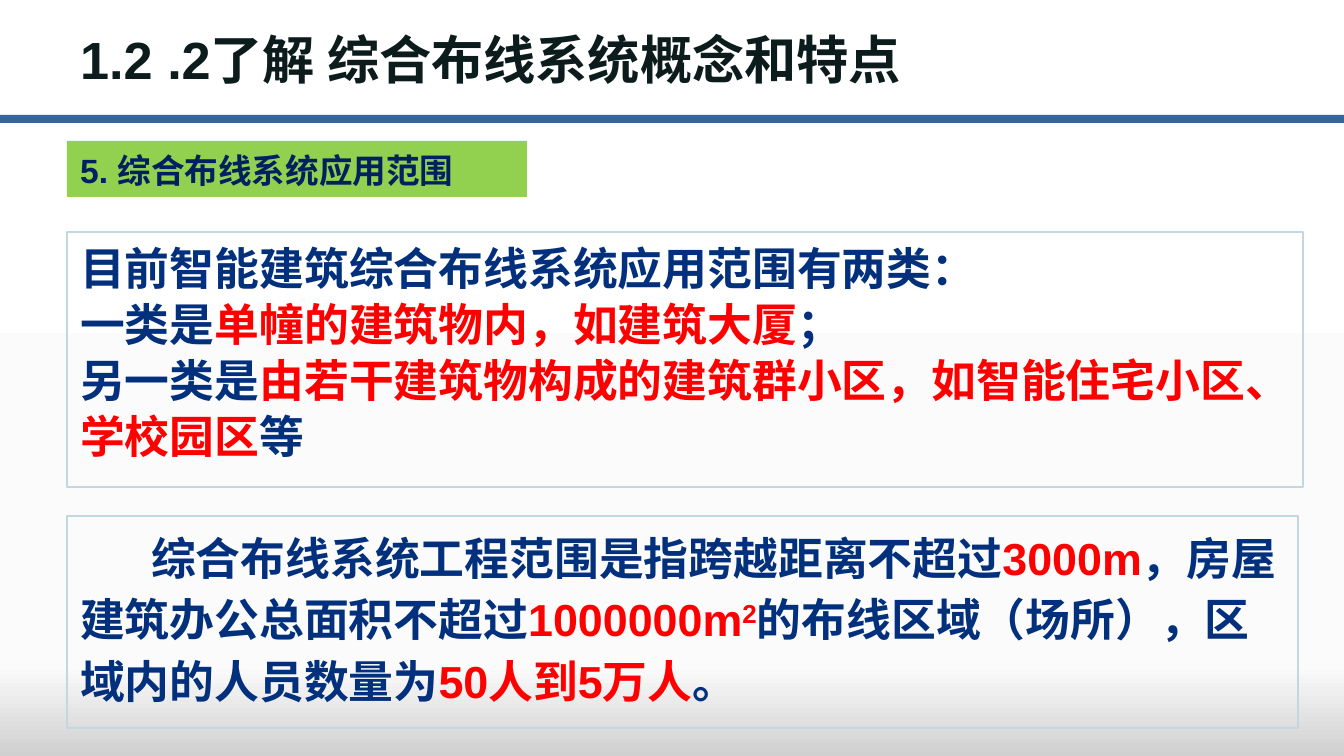
from lxml.etree import SubElement
from pptx import Presentation
from pptx.dml.color import RGBColor as Rgb
from pptx.enum.lang import MSO_LANGUAGE_ID as Lang
from pptx.enum.shapes import MSO_SHAPE as Shape
from pptx.enum.text import MSO_ANCHOR as Anchor, PP_ALIGN as Align
from pptx.oxml.ns import qn
from pptx.util import Pt

PX = 914400 / 134.4
HUES = {
    "title": "0C1C1D", "bar": "336699", "tag": "92D050", "head": "002060",
    "body": "02307C", "key": "FF0000", "edge": "C3D7E1",
}


def px(n):
    return round(n * PX)


def rgb(name):
    return Rgb.from_string(HUES[name])


def write(box, paras, size=24, hue="body", lead=None, dent=0, mid=False):
    """Each paragraph is a list of runs: text, or (text, hue[, baseline])."""
    frame = box.text_frame
    frame.word_wrap = True
    frame.vertical_anchor = Anchor.MIDDLE if mid else Anchor.TOP
    for i, runs in enumerate(paras):
        para = frame.add_paragraph() if i else frame.paragraphs[0]
        para.alignment = Align.LEFT
        para.line_spacing = lead
        if dent:
            para._p.get_or_add_pPr().set("indent", str(px(dent)))
        for part in runs:
            text, tint, *base = (part, hue) if isinstance(part, str) else part
            run = para.add_run()
            run.text = text
            font = run.font
            font.name, font.size, font.bold = "Arial", Pt(size), True
            font.color.rgb = rgb(tint)
            font.language_id = Lang.SIMPLIFIED_CHINESE
            if base:
                font._element.set("baseline", str(base[0] * 1000))


def block(x, y, w, h, fill=None, edge=None):
    box = slide.shapes.add_shape(Shape.RECTANGLE, px(x), px(y), px(w), px(h))
    box.shadow.inherit = False
    if fill:
        box.fill.solid()
        box.fill.fore_color.rgb = rgb(fill)
    else:
        box.fill.background()
    if edge:
        box.line.color.rgb = rgb(edge)
        box.line.width = Pt(0.75)
    else:
        box.line.fill.background()
    return box


deck = Presentation()
deck.slide_width, deck.slide_height = px(1344), px(756)
slide = deck.slides.add_slide(deck.slide_layouts[6])

# Background fading to grey at the foot
back = slide.background.fill
back.gradient()
back.gradient_angle = 270
stops = back._fill._gradFill.find(qn("a:gsLst"))
for old in list(stops):
    stops.remove(old)
for pos, hue in ((0, "FFFFFF"), (88, "FBFBFB"), (100, "D0D0D0")):
    stop = SubElement(stops, qn("a:gs"), pos=str(pos * 1000))
    SubElement(stop, qn("a:srgbClr"), val=hue)

# Title and rule
block(-1, 115, 1346, 8, fill="bar")
title = slide.shapes.add_textbox(px(67), px(12), px(1200), px(94))
write(title, [["1.2 .2了解 综合布线系统概念和特点"]], size=28, hue="title", mid=True)

# Section tag
tag = block(67, 141, 460, 56, fill="tag")
write(tag, [["5. 综合布线系统应用范围"]], size=18, hue="head", lead=1.05, mid=True)

# Two kinds of use
kinds = block(67, 232, 1236, 255, edge="edge")
write(kinds, [
    ["目前智能建筑综合布线系统应用范围有两类："],
    ["一类是", ("单幢的建筑物内，如建筑大厦", "key"), "；"],
    ["另一类是",
     ("由若干建筑物构成的建筑群小区，如智能住宅小区、学校园区", "key"), "等"],
], lead=Pt(30))

# Limits of the works
limits = block(67, 516, 1231, 212, edge="edge")
write(limits, [[
    "综合布线系统工程范围是指跨越距离不超过", ("3000m", "key"),
    "，房屋建筑办公总面积不超过", ("1000000m", "key"), ("2", "key", 30),
    "的布线区域（场所），区域内的人员数量为", ("50人到5万人", "key"), "。",
]], lead=Pt(33), dent=71)

deck.save("out.pptx")
